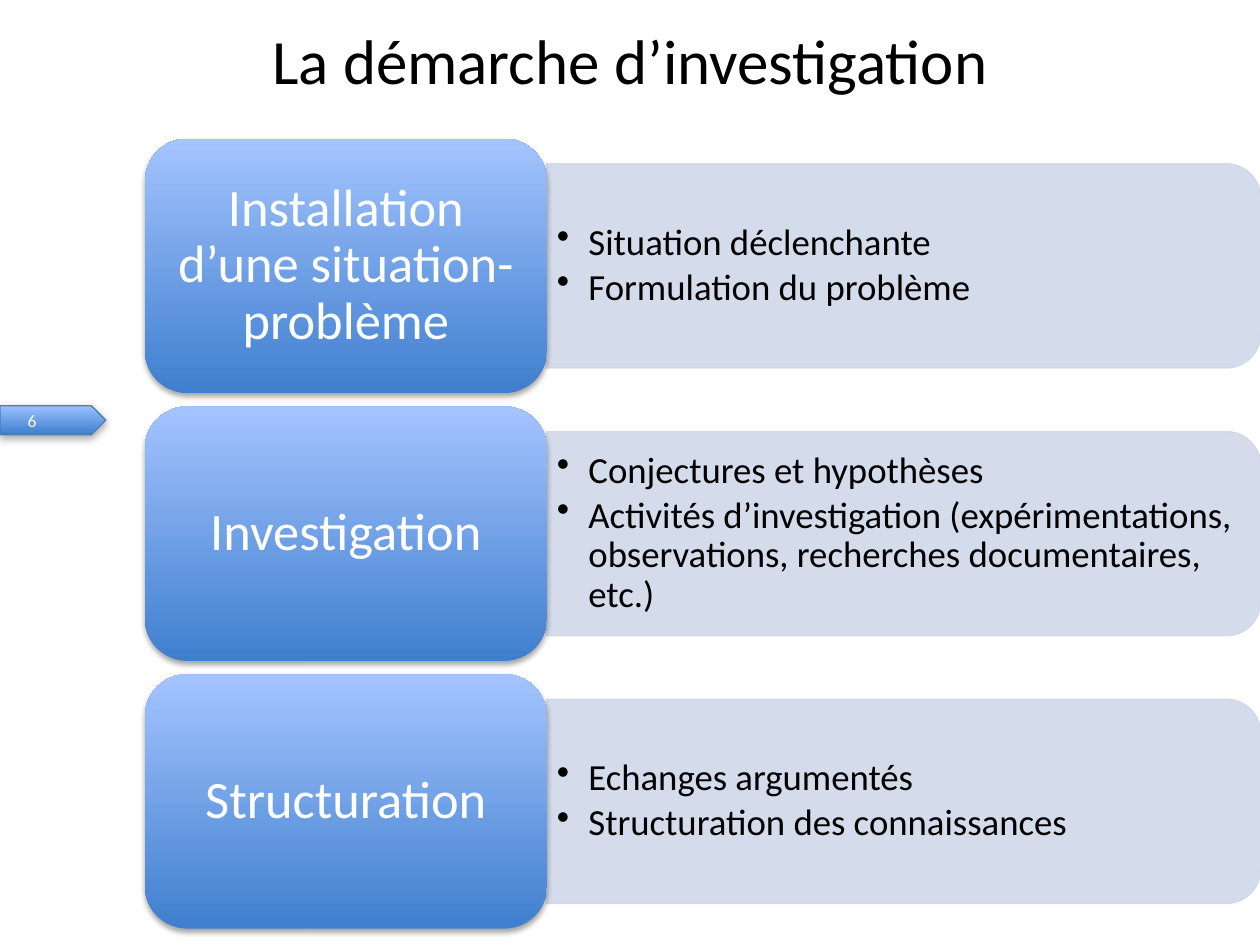
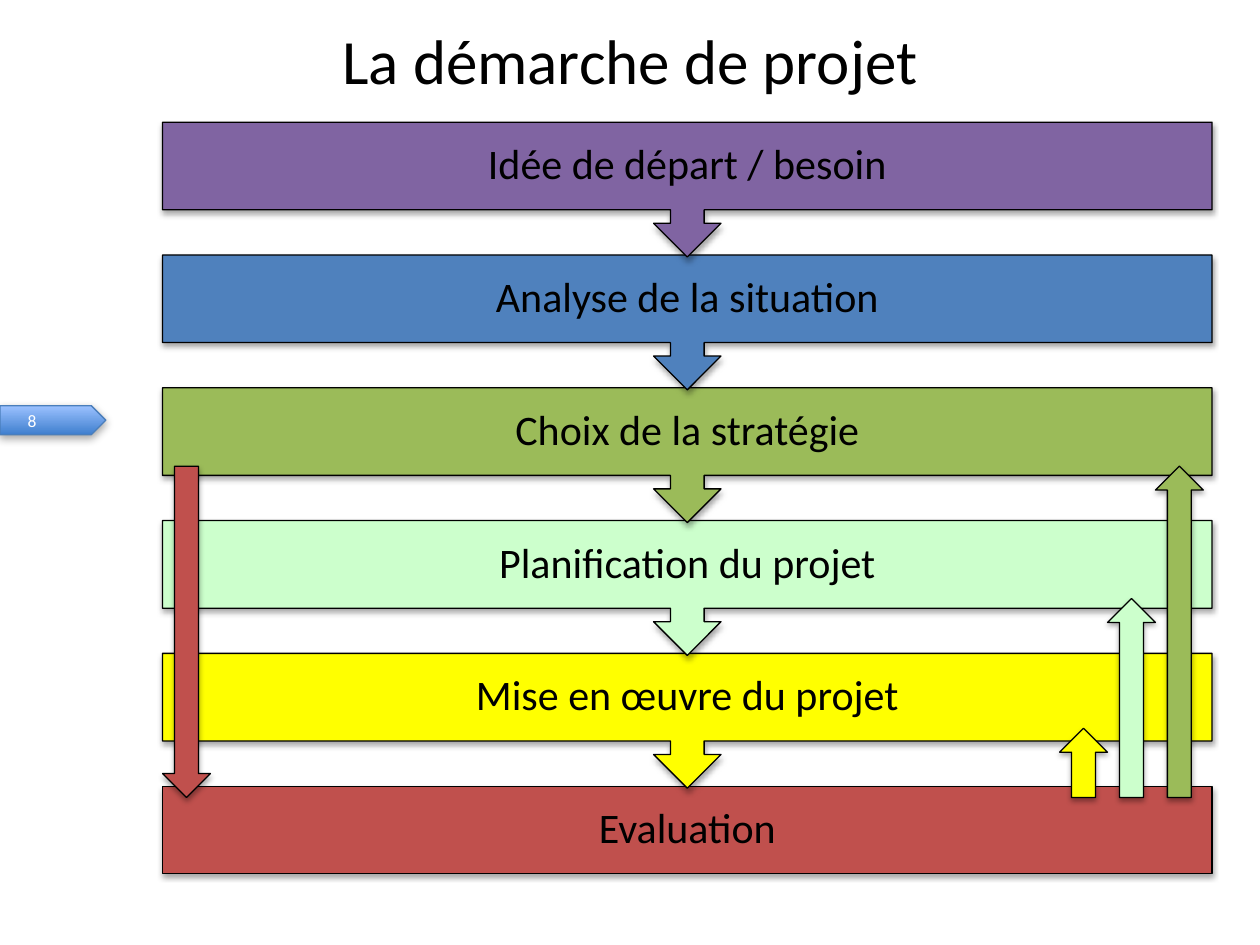
"""Build two slides on the stages of the inquiry and project methods."""
from lxml.etree import SubElement
from pptx import Presentation
from pptx.dml.color import RGBColor
from pptx.enum.shapes import MSO_SHAPE as Kind
from pptx.enum.text import MSO_ANCHOR as Anchor, PP_ALIGN as Align
from pptx.oxml.ns import qn
from pptx.util import Inches, Pt

FONT = "Calibri"
BLACK = RGBColor(0x00, 0x00, 0x00)
WHITE = RGBColor(0xFF, 0xFF, 0xFF)
SKY = RGBColor(0x9B, 0xC1, 0xFF)
PALE = RGBColor(0xA4, 0xC4, 0xFF)
AZURE = RGBColor(0x3F, 0x7F, 0xCE)
EDGE = RGBColor(0x4A, 0x7E, 0xBB)
MIST = RGBColor(0xD0, 0xD8, 0xE8)
PURPLE = RGBColor(0x80, 0x64, 0xA2)
BLUE = RGBColor(0x4F, 0x81, 0xBD)
GREEN = RGBColor(0x9B, 0xBB, 0x59)
MINT = RGBColor(0xCC, 0xFF, 0xCC)
YELLOW = RGBColor(0xFF, 0xFF, 0x00)
RED = RGBColor(0xC0, 0x50, 0x4D)

PHASES = [
    ("Installation d’une situation-problème",
     ["Situation déclenchante", "Formulation du problème"]),
    ("Investigation",
     ["Conjectures et hypothèses",
      "Activités d’investigation (expérimentations, observations, "
      "recherches documentaires, etc.)"]),
    ("Structuration",
     ["Echanges argumentés", "Structuration des connaissances"]),
]
PHASE_TOP, PHASE_STEP = 1.1, 2.125

STEPS = [
    ("Idée de départ / besoin", PURPLE),
    ("Analyse de la situation", BLUE),
    ("Choix de la stratégie", GREEN),
    ("Planification du projet", MINT),
    ("Mise en œuvre du projet", YELLOW),
    ("Evaluation", RED),
]
STEP_LEFT, STEP_TOP, STEP_GAP = 1.29, 0.97, 1.054
LOOP_END, LOOP_WIDE = 6.33, 0.38
LOOPS = [(8.41, 5.78, YELLOW), (8.79, 4.75, MINT), (9.17, 3.7, GREEN)]


def write(shape, *lines, size, color=BLACK, align=Align.CENTER, space=1.0,
          after=0, inset=(0.1, 0.05), bullet=False):
    """Fill a shape with formatted paragraphs, centred vertically."""
    frame = shape.text_frame
    frame.word_wrap = True
    frame.vertical_anchor = Anchor.MIDDLE
    frame.margin_left = frame.margin_right = Inches(inset[0])
    frame.margin_top = frame.margin_bottom = Inches(inset[1])
    for i, line in enumerate(lines):
        para = frame.add_paragraph() if i else frame.paragraphs[0]
        if bullet:
            props = para._p.get_or_add_pPr()
            props.set("marL", str(Inches(0.25)))
            props.set("indent", str(-Inches(0.25)))
            SubElement(props, qn("a:buChar"), char="•")
        para.alignment = align
        para.line_spacing = space
        para.space_after = Pt(after)
        run = para.add_run()
        run.text = line
        run.font.name = FONT
        run.font.size = Pt(size)
        run.font.color.rgb = color


def add_text(slide, box, *lines, **style):
    """Add a text box."""
    write(slide.shapes.add_textbox(*map(Inches, box)), *lines, **style)


def add_form(slide, kind, box, fill, line=None, blur=3.1):
    """Add a solid or two-colour shape with a soft shadow unless blur is 0."""
    form = slide.shapes.add_shape(kind, *map(Inches, box))
    if isinstance(fill, RGBColor):
        form.fill.solid()
        form.fill.fore_color.rgb = fill
    else:
        form.fill.gradient()
        form.fill.gradient_angle = 90
        for stop, color in zip(form.fill.gradient_stops, fill):
            stop.color.rgb = color
    if line is None:
        form.line.fill.background()
    else:
        form.line.color.rgb = line
        form.line.width = Pt(0.75)
    form.shadow.inherit = False
    if blur:
        cast_shade(form, blur)
    return form


def cast_shade(form, blur):
    """Give a shape a shadow that falls straight down."""
    effects = form.element.spPr.find(qn("a:effectLst"))
    shade = SubElement(effects, qn("a:outerShdw"), blurRad=str(Pt(blur)),
                       dist=str(Pt(1.8)), dir="5400000", rotWithShape="0")
    color = SubElement(shade, qn("a:srgbClr"), val=str(BLACK))
    SubElement(color, qn("a:alpha"), val="35000")


def add_slide(deck, title, number):
    """Add a slide with its title and its page tab."""
    slide = deck.slides.add_slide(deck.slide_layouts[6])
    tab = add_form(slide, Kind.PENTAGON, (0, 3.22, 0.84, 0.23),
                   (AZURE, SKY), EDGE, blur=5)
    write(tab, number, size=10, color=WHITE, align=Align.LEFT,
          inset=(0.22, 0))
    add_text(slide, (0.5, 0.04, 9, 0.86), title, size=36)
    return slide


def add_phase(slide, top, name, points):
    """Add a phase tile with its panel of points on the right."""
    wide, high = 1.62, 5.67
    panel = add_form(slide, Kind.ROUND_2_SAME_RECTANGLE,
                     (6.36, top + 1.01 - high / 2, wide, high),
                     MIST, MIST, blur=0)
    panel.rotation = 90
    for color in panel.element.spPr.iter(qn("a:srgbClr")):
        SubElement(color, qn("a:alpha"), val="90000")
    add_text(slide, (4.33, top + 0.28, 5.59, 1.46), *points, size=21,
             align=Align.LEFT, space=0.9, after=3, inset=(0.09, 0.04),
             bullet=True)
    tile = add_form(slide, Kind.ROUNDED_RECTANGLE, (1.15, top, 3.19, 2.02),
                    (AZURE, PALE))
    write(tile, name, size=30, color=WHITE, space=0.9, inset=(0.12, 0.06))


def add_step(slide, row, name, color):
    """Add a step bar, which points to the next one unless it is last."""
    last = row == len(STEPS) - 1
    kind = Kind.RECTANGLE if last else Kind.DOWN_ARROW_CALLOUT
    box = (STEP_LEFT, STEP_TOP + row * STEP_GAP, 8.33, 0.69 if last else 1.07)
    bar = add_form(slide, kind, box, color, BLACK)
    write(bar, name, size=24, space=0.9, inset=(0.19, 0.1))


def add_loop(slide, kind, left, top, color):
    """Add a long arrow between a step and the evaluation."""
    add_form(slide, kind, (left, top, LOOP_WIDE, LOOP_END - top),
             color, BLACK)


def main():
    """Build and save the deck."""
    deck = Presentation()
    deck.slide_width, deck.slide_height = Inches(10), Inches(7.5)

    slide = add_slide(deck, "La démarche d’investigation", "6")
    for row, (name, points) in enumerate(PHASES):
        add_phase(slide, PHASE_TOP + row * PHASE_STEP, name, points)

    slide = add_slide(deck, "La démarche de projet", "8")
    for row, (name, color) in reversed(list(enumerate(STEPS))):
        add_step(slide, row, name, color)
    for left, top, color in LOOPS:
        add_loop(slide, Kind.UP_ARROW, left, top, color)
    add_loop(slide, Kind.DOWN_ARROW, STEP_LEFT, 3.7, RED)

    deck.save("out.pptx")


if __name__ == "__main__":
    main()
